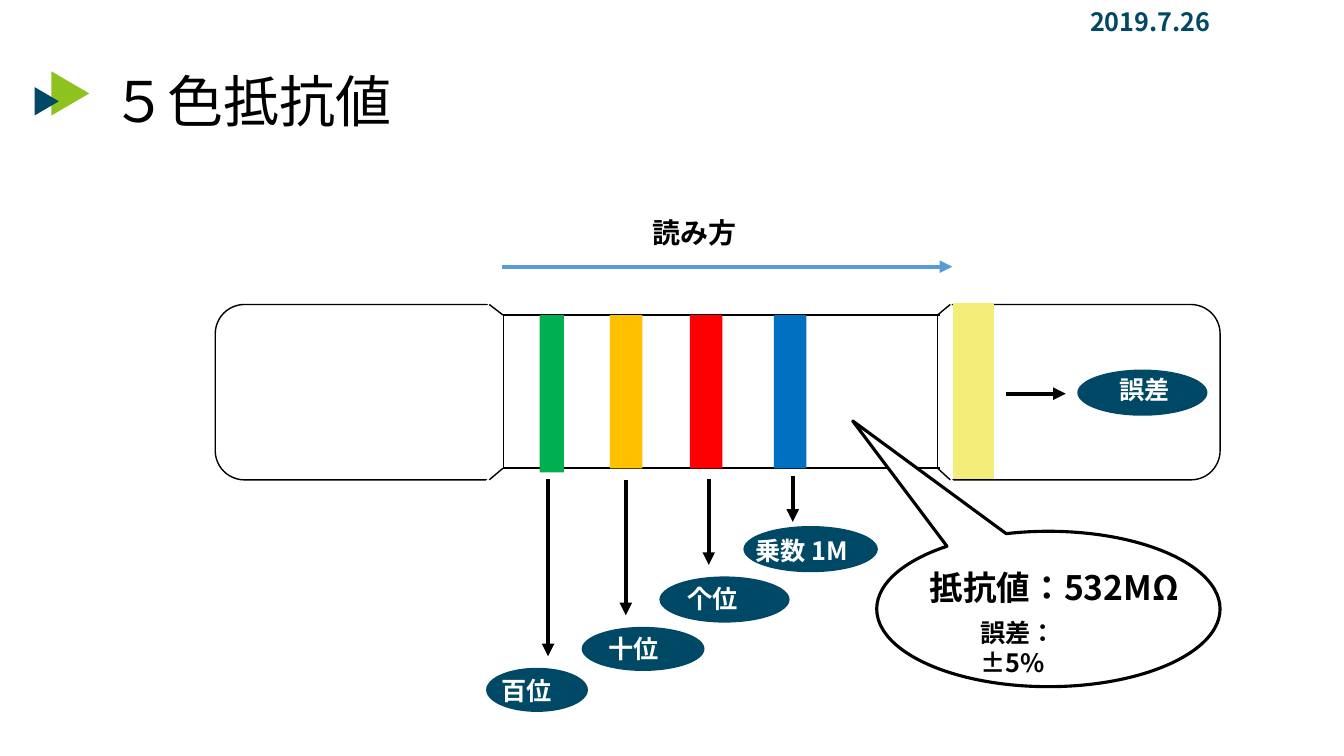
from lxml import etree
from pptx import Presentation
from pptx.dml.color import RGBColor
from pptx.enum import lang, shapes, text
from pptx.oxml import ns
from pptx.util import Pt

# Content: lengths in px, boxes as (left, top, width, height)
PX = 9525
SLIDE_SIZE = (1280, 720)
THEME = {
    "navy": "004966", "lime": "8EC31F", "black": "000000", "white": "FFFFFF",
    "blue arrow": "5B9BD5", "green": "00B050", "orange": "FFC000",
    "red": "FF0000", "blue": "0070C0", "yellow": "F3EE79",
    "label font": "Noto Sans CJK SC", "title font": "Calibri", "heading font": "Cabin",
    "title": 40, "value": 24, "heading": 20, "label": 18,
}
TITLE = ("５色抵抗値", (97, 44, 841, 89))
DATE = ("2019.7.26", (911, 5, 369, 39))
HEADING = ("読み方", (612, 153, 300, 89))
MARKERS = [((46, 71, 42, 36), "lime"), ((31, 85, 27, 23), "navy")]

BODY = (205, 290, 957, 167)
WAIST_LEFT, WAIST_RIGHT, WAIST_TOP, WAIST_BOTTOM = 479, 893, 300, 446
CUTS = [((463, 275, 445, 25), 180), ((463, 446, 445, 25), 0)]
BANDS = [
    ((581, 300, 31, 146), "orange"),
    ((514, 300, 23, 150), "green"),
    ((657, 300, 31, 146), "red"),
    ((737, 300, 31, 146), "blue"),
]
TOLERANCE_BAND = (908, 289, 38, 167)
CALLOUT, CALLOUT_TIP = (835, 506, 327, 148), (-0.57, -1.21)

# Ellipses behind the labels, then the labels themselves
ELLIPSES = [(554, 597, 117, 42), (628, 549, 124, 44), (463, 636, 97, 42),
            (1026, 352, 124, 44), (708, 501, 128, 44)]
LABELS = [
    ("百位", (468, 638, 80, 38), "white", "label"),
    ("十位", (570, 598, 80, 38), "white", "label"),
    ("个位", (645, 551, 80, 38), "white", "label"),
    ("乗数 1M", (710, 505, 126, 38), "white", "label"),
    ("誤差", (1057, 352, 74, 38), "white", "label"),
    ("抵抗値：532MΩ", (876, 535, 274, 48), "black", "value"),
    ("誤差：±5%", (924, 583, 140, 38), "black", "label"),
]
READING_ARROW = (478, 254, 907, 254)
ARROWS = [(522, 456, 522, 625), (596, 457, 596, 586), (675, 456, 675, 538),
          (755, 453, 755, 497), (958, 375, 1015, 375)]

presentation = Presentation()
presentation.slide_width, presentation.slide_height = (side * PX for side in SLIDE_SIZE)
slide = presentation.slides.add_slide(presentation.slide_layouts[5])


def color(name):
    return RGBColor.from_string(THEME[name])


def scaled(lengths):
    return [length * PX for length in lengths]


def set_all(target, **values):
    for name, value in values.items():
        setattr(target, name, value)


def add_shape(kind, box, fill, line=None, width=1, rotation=0, adjustments=()):
    shape = slide.shapes.add_shape(kind, *scaled(box))
    shape.shadow.inherit = False
    shape.rotation = rotation
    shape.fill.solid()
    shape.fill.fore_color.rgb = color(fill)
    if line:
        shape.line.color.rgb = color(line)
        shape.line.width = Pt(width)
    else:
        shape.line.fill.background()
    for index, value in enumerate(adjustments):
        shape.adjustments[index] = value


def add_line(ends, width, name="black", arrow=False):
    line = slide.shapes.add_connector(shapes.MSO_CONNECTOR.STRAIGHT, *scaled(ends))
    line.line.color.rgb = color(name)
    line.line.width = Pt(width)
    if arrow:
        etree.SubElement(line.line._get_or_add_ln(), ns.qn("a:tailEnd"), type="triangle")
    etree.SubElement(line._element.spPr, ns.qn("a:effectLst"))


def write(shape, words, size, name="black", font="label font", bold=True,
          anchor=text.MSO_ANCHOR.TOP, **paragraph_format):
    frame = shape.text_frame
    set_all(frame, word_wrap=True, auto_size=text.MSO_AUTO_SIZE.NONE,
            vertical_anchor=anchor)
    paragraph = frame.paragraphs[0]
    set_all(paragraph, **{"alignment": text.PP_ALIGN.LEFT, **paragraph_format})
    run = paragraph.add_run()
    run.text = words
    set_all(run.font, size=Pt(THEME[size]), bold=bold, name=THEME[font],
            language_id=lang.MSO_LANGUAGE_ID.JAPANESE)
    run.font.color.rgb = color(name)
    east_asian = etree.SubElement(run.font._element, ns.qn("a:ea"))
    east_asian.set("typeface", THEME["label font"])


def add_text(words, box, size, **options):
    write(slide.shapes.add_textbox(*scaled(box)), words, size, **options)


# Title, markers, date and heading
KIND = shapes.MSO_SHAPE
for box, fill in MARKERS:
    add_shape(KIND.ISOSCELES_TRIANGLE, box, fill, rotation=90)
title = slide.shapes.title
set_all(title, **dict(zip(("left", "top", "width", "height"), scaled(TITLE[1]))))
write(title, TITLE[0], "title", font="title font", bold=False,
      anchor=text.MSO_ANCHOR.BOTTOM, line_spacing=0.9)
add_text(*DATE, "label", name="navy", alignment=text.PP_ALIGN.CENTER,
         line_spacing=0.9, space_before=Pt(10))
add_text(*HEADING, "heading", font="heading font",
         anchor=text.MSO_ANCHOR.BOTTOM, line_spacing=0.9)

# Resistor body with its narrow waist
for box in ELLIPSES[:3]:
    add_shape(KIND.OVAL, box, "navy")
add_shape(KIND.ROUNDED_RECTANGLE, BODY, "white", "black")
for box, rotation in CUTS:
    add_shape(KIND.SNIP_2_SAME_RECTANGLE, box, "white", rotation=rotation,
              adjustments=(0.47, 0))
for y, outer_y in ((WAIST_TOP, 290), (WAIST_BOTTOM, 457)):
    add_line((WAIST_LEFT, y, WAIST_RIGHT + 2, y), 1.5)
    for x, outer_x in ((WAIST_LEFT, 466), (WAIST_RIGHT, 905)):
        add_line((outer_x, outer_y, x, y), 1)
for box, fill in BANDS:
    add_shape(KIND.RECTANGLE, box, fill)
for x in (WAIST_LEFT, WAIST_RIGHT):
    add_line((x, WAIST_TOP, x, WAIST_BOTTOM), 0.5)

# Callout, tolerance band and arrows
add_shape(KIND.OVAL_CALLOUT, CALLOUT, "white", "black", 2.25, adjustments=CALLOUT_TIP)
add_shape(KIND.RECTANGLE, TOLERANCE_BAND, "yellow", "yellow")
add_line(READING_ARROW, 3, "blue arrow", arrow=True)
for ends in ARROWS:
    add_line(ends, 3, arrow=True)

# Labels
for box in ELLIPSES[3:]:
    add_shape(KIND.OVAL, box, "navy")
for words, box, name, size in LABELS:
    add_text(words, box, size, name=name)

presentation.save("out.pptx")
